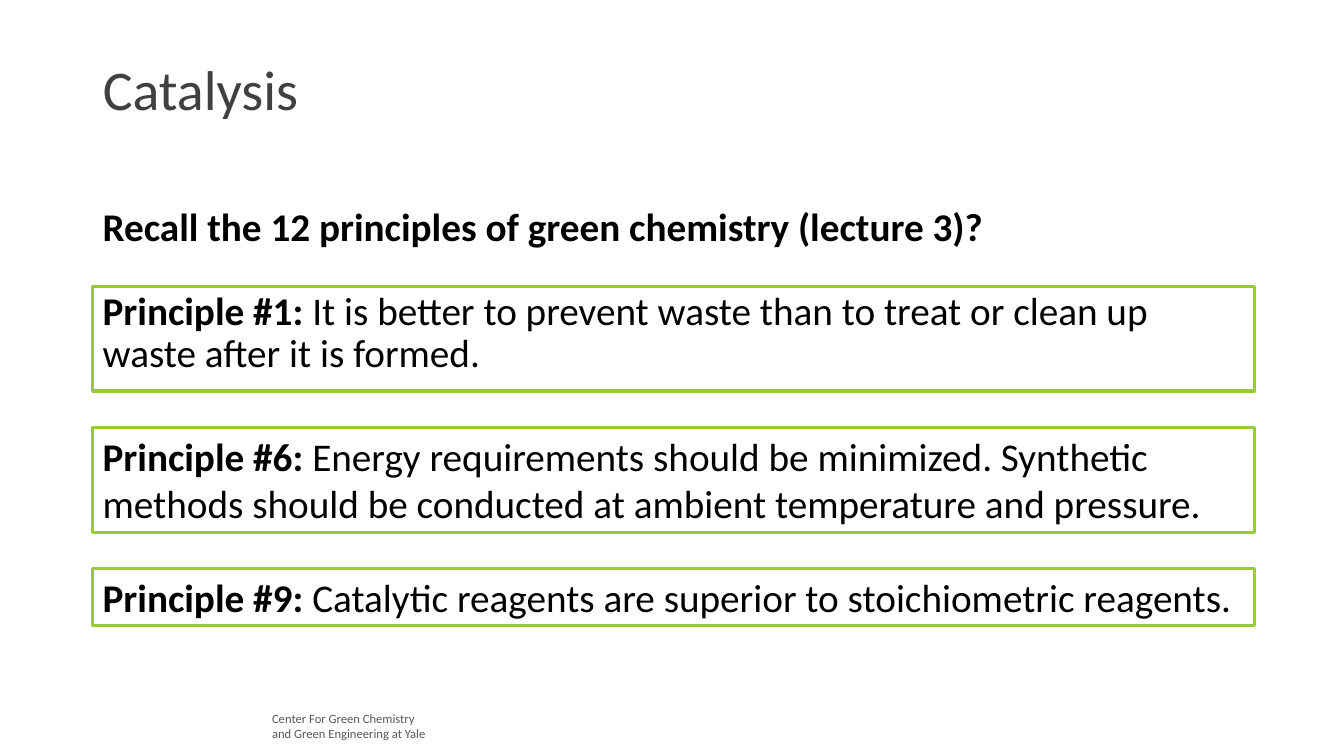
"""Build the Catalysis slide with three boxed principles of green chemistry."""
from lxml import etree
from pptx import Presentation
from pptx import util as u
from pptx.dml import color
from pptx.enum import shapes, text
from pptx.oxml import ns

COLORS = {"title": "404040", "footer": "595959", "body": "000000", "box": "99CB38"}
FRAME = {"word_wrap": True, "auto_size": text.MSO_AUTO_SIZE.NONE,
         "vertical_anchor": text.MSO_ANCHOR.TOP}
LEFT, BOX_WIDTH, BOX_TOP, BOX_GAP = 0.92, 11.52, 2.84, 0.36
RULES = [
    ((0.92, 9.77), 1.41, "4EB3CF"),
    ((0.90, 11.71), 1.48, "44C1A3"),
    ((0.91, 12.42), 1.55, "37A76F"),
]
PRINCIPLES = [
    ("Principle #1: ", "It is better to prevent waste than to treat or clean up "
     "waste after it is formed.", 1.04, 0.9),
    ("Principle #6: ", "Energy requirements should be minimized. Synthetic methods "
     "should be conducted at ambient temperature and pressure.", 1.04, 1.0),
    ("Principle #9: ", "Catalytic reagents are superior to stoichiometric reagents.",
     0.57, 1.0),
]


def apply(target, values):
    """Set each named attribute on the target."""
    for name, value in values.items():
        setattr(target, name, value)


def place(shape, left, top, width, height):
    """Move and size a shape in inches."""
    sides = zip(("left", "top", "width", "height"), (left, top, width, height))
    apply(shape, {name: u.Inches(value) for name, value in sides})


def write(shape, paragraphs, size, tint, spacing=1.0, **frame):
    """Fill a shape with paragraphs, each a list of (words, bold) spans."""
    apply(shape.text_frame, {**FRAME, **frame})
    for index, spans in enumerate(paragraphs):
        para = (shape.text_frame.add_paragraph() if index
                else shape.text_frame.paragraphs[0])
        apply(para, {"alignment": text.PP_ALIGN.LEFT, "line_spacing": spacing,
                     "space_before": u.Pt(0)})
        for words, bold in spans:
            span = para.add_run()
            span.text = words
            apply(span.font, {"name": "Calibri", "size": u.Pt(size), "bold": bold})
            span.font.color.rgb = color.RGBColor.from_string(COLORS[tint])


def add_rule(page, ends, top, tint):
    """Draw a very faint thin rule under the title."""
    start, end = map(u.Inches, ends)
    rule = page.shapes.add_connector(shapes.MSO_CONNECTOR.STRAIGHT,
                                     start, u.Inches(top), end, u.Inches(top))
    rule.line.width = u.Pt(0.5)
    rule.line.color.rgb = color.RGBColor.from_string(tint)
    properties = rule.element.spPr
    fill = properties.find(".//" + ns.qn("a:srgbClr"))
    etree.SubElement(fill, ns.qn("a:alpha"), val="2000")
    etree.SubElement(properties, ns.qn("a:effectLst"))


def add_label(page, bounds, paragraphs, size, tint, **frame):
    """Add a plain text box."""
    label = page.shapes.add_textbox(*map(u.Inches, bounds))
    write(label, paragraphs, size, tint, **frame)


def add_principle(page, top, heading, words, height, spacing):
    """Add a green outlined box with a bold heading and its principle."""
    bounds = map(u.Inches, (LEFT, top, BOX_WIDTH, height))
    box = page.shapes.add_shape(shapes.MSO_SHAPE.RECTANGLE, *bounds)
    box.shadow.inherit = False
    box.fill.background()
    box.line.width = u.Pt(2.25)
    box.line.color.rgb = color.RGBColor.from_string(COLORS["box"])
    write(box, [[(heading, True), (words, False)]], 28, "body", spacing)


def main():
    """Build and save the deck."""
    deck = Presentation()
    apply(deck, {"slide_width": u.Inches(13.33), "slide_height": u.Inches(7.5)})
    page = deck.slides.add_slide(deck.slide_layouts[5])

    add_label(page, (2.6, 7, 1.86, 0.4),
              [[("Center For Green Chemistry", False)],
               [("and Green Engineering at Yale", False)]], 9, "footer")
    for rule in RULES:
        add_rule(page, *rule)

    title = page.shapes.title
    place(title, LEFT, 0.19, 11.5, 1.45)
    write(title, [[("Catalysis", False)]], 40, "title", 0.9,
          vertical_anchor=text.MSO_ANCHOR.MIDDLE)

    add_label(page, (LEFT, 1.96, 8.97, 0.88),
              [[("Recall the 12 principles of green chemistry (lecture 3)?", True)]],
              28, "body", word_wrap=False)
    top = BOX_TOP
    for heading, words, height, spacing in PRINCIPLES:
        add_principle(page, top, heading, words, height, spacing)
        top += height + BOX_GAP
    deck.save("out.pptx")


if __name__ == "__main__":
    main()
